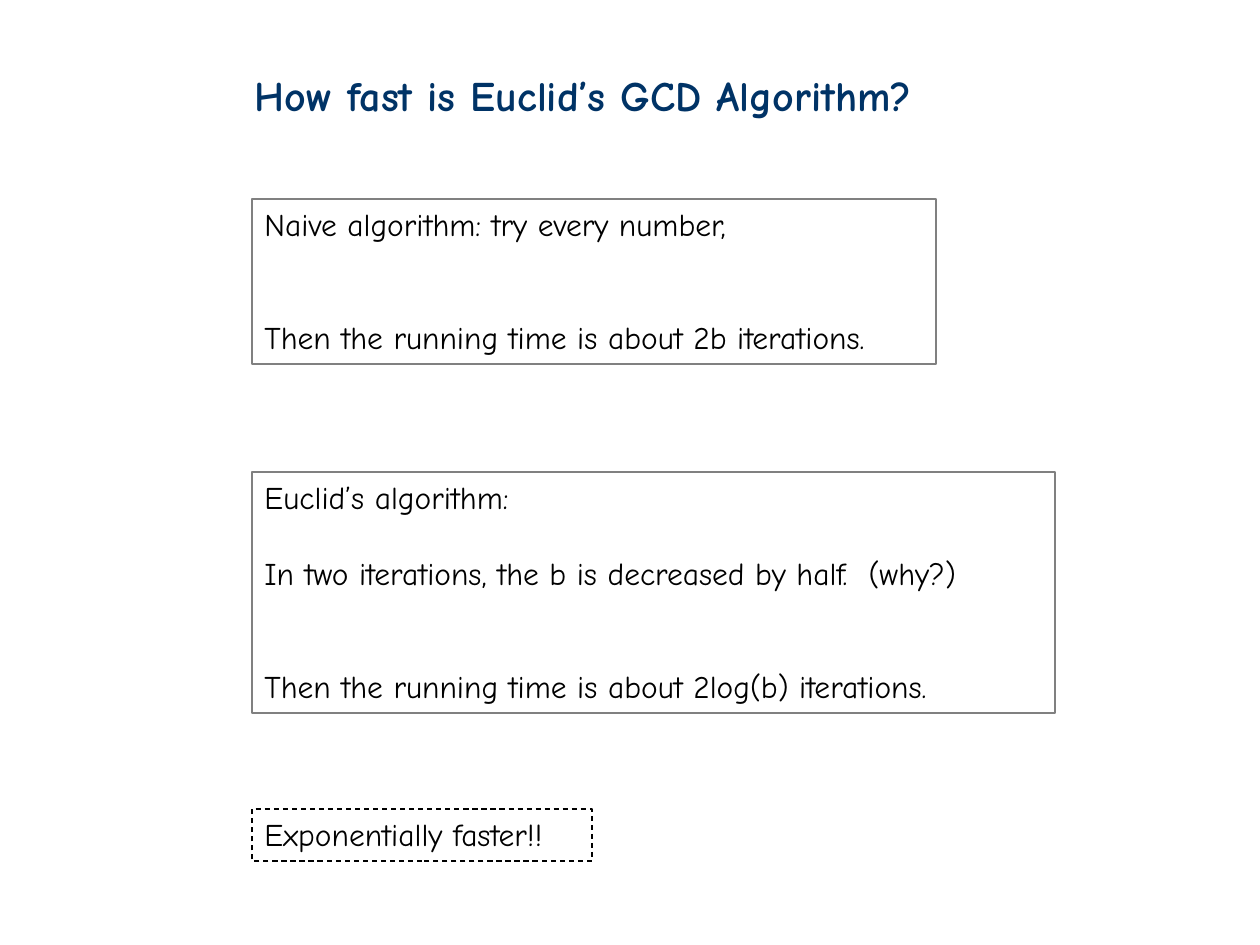
"""Build a slide comparing the running times of two GCD algorithms."""
from dataclasses import dataclass

from pptx import Presentation
from pptx.dml.color import RGBColor
from pptx.enum.dml import MSO_LINE
from pptx.enum.shapes import MSO_SHAPE
from pptx.enum.text import MSO_ANCHOR, PP_ALIGN
from pptx.slide import Slide
from pptx.text.text import TextFrame
from pptx.util import Emu, Pt

RECTANGLE = MSO_SHAPE.RECTANGLE
SOLID, DASH = MSO_LINE.SOLID, MSO_LINE.DASH
TOP, LEFT = MSO_ANCHOR.TOP, PP_ALIGN.LEFT
PX_PER_INCH = 126
BOX_LEFT = 252


@dataclass(frozen=True)
class Theme:
    font: str = "Comic Neue"
    title_color: str = "003366"
    text_color: str = "000000"
    border_color: str = "808080"
    title_size: int = 24
    body_size: int = 18
    line_gap: float = 21.5
    border_width: float = 0.75


@dataclass(frozen=True)
class Line:
    text: str
    gap_lines: int = 0


@dataclass(frozen=True)
class Panel:
    top: int
    width: int
    height: int
    lines: tuple[Line, ...]
    color: str
    dash: MSO_LINE = SOLID


THEME = Theme()
TITLE = Line("How fast is Euclid’s GCD Algorithm?")
PANELS = (
    Panel(199, 684, 165, (
        Line("Naive algorithm: try every number,"),
        Line("Then the running time is about 2b iterations.", 2),
    ), THEME.border_color),
    Panel(472, 803, 241, (
        Line("Euclid’s algorithm:"),
        Line("In two iterations, the b is decreased by half.  (why?)", 1),
        Line("Then the running time is about 2log(b) iterations.", 2),
    ), THEME.border_color),
    Panel(809, 340, 52, (Line("Exponentially faster!!"),), THEME.text_color, DASH),
)


def px(length: int) -> Emu:
    """Turn pixels into EMU."""
    return Emu(round(length * 914400 / PX_PER_INCH))


def write_text(frame: TextFrame, lines: tuple[Line, ...], *, size: int,
               color: str, bold: bool = False) -> None:
    """Write each line as a formatted paragraph."""
    frame.word_wrap = True
    frame.vertical_anchor = TOP
    for index, line in enumerate(lines):
        para = frame.add_paragraph() if index else frame.paragraphs[0]
        para.alignment = LEFT
        para.space_before = Pt(line.gap_lines * THEME.line_gap)
        span = para.add_run()
        span.text = line.text
        span.font.name = THEME.font
        span.font.size = Pt(size)
        span.font.bold = bold
        span.font.color.rgb = RGBColor.from_string(color)


def draw_panel(page: Slide, panel: Panel) -> None:
    """Draw an outlined box with its lines of text."""
    box = page.shapes.add_shape(RECTANGLE, px(BOX_LEFT), px(panel.top),
                                px(panel.width), px(panel.height))
    box.shadow.inherit = False
    box.fill.background()
    box.line.color.rgb = RGBColor.from_string(panel.color)
    box.line.width = Pt(THEME.border_width)
    box.line.dash_style = panel.dash
    write_text(box.text_frame, panel.lines,
               size=THEME.body_size, color=THEME.text_color)


def main() -> None:
    """Build and save the slide."""
    deck = Presentation()
    deck.slide_width, deck.slide_height = px(1260), px(945)
    page = deck.slides.add_slide(deck.slide_layouts[6])
    title = page.shapes.add_textbox(px(242), px(63), px(767), px(63))
    write_text(title.text_frame, (TITLE,), size=THEME.title_size,
               color=THEME.title_color, bold=True)
    for panel in PANELS:
        draw_panel(page, panel)
    deck.save("out.pptx")


if __name__ == "__main__":
    main()
